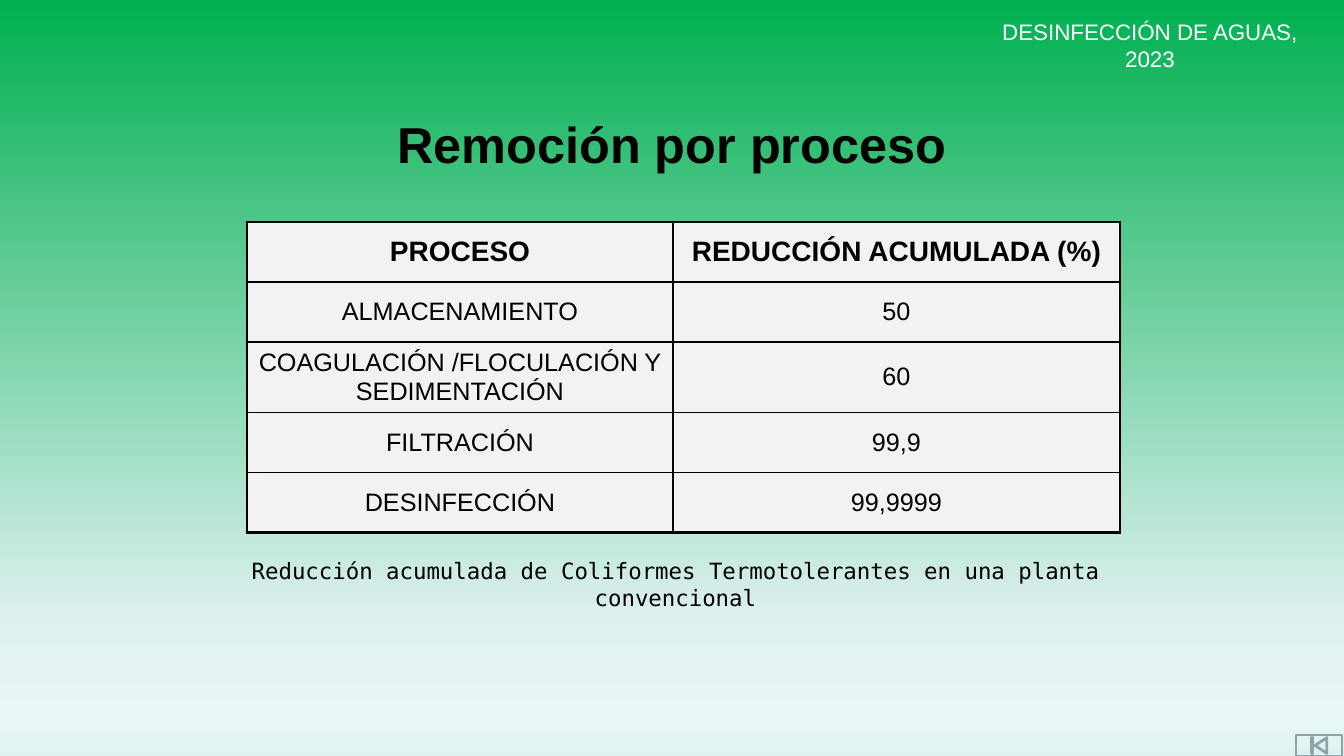
import lxml.etree
import pptx
import pptx.dml.color
import pptx.enum.shapes
import pptx.enum.text
import pptx.oxml
import pptx.oxml.ns
import pptx.util

SLIDE_WIDTH, SLIDE_HEIGHT = 1344, 756
EMU_PER_PX = 12192000 / SLIDE_WIDTH
COLORS = {
    "green": "00B050",
    "mist": "E0F1F2",
    "pale": "EBF6F7",
    "cell": "F2F2F2",
    "button": "8AA6A8",
    "black": "000000",
    "white": "FFFFFF",
}
BACKGROUND_STOPS = [(0, "green"), (83, "mist"), (95, "pale"), (100, "mist")]
COLUMN_WIDTHS = [426, 447]
ROW_HEIGHTS = [60, 60, 70, 60, 60]
REMOVAL_ROWS = [
    ("PROCESO", "REDUCCIÓN ACUMULADA (%)"),
    ("ALMACENAMIENTO", "50"),
    ("COAGULACIÓN /FLOCULACIÓN Y SEDIMENTACIÓN", "60"),
    ("FILTRACIÓN", "99,9"),
    ("DESINFECCIÓN", "99,9999"),
]


def px(length):
    return pptx.util.Emu(round(length * EMU_PER_PX))


def color(name):
    return pptx.dml.color.RGBColor.from_string(COLORS[name])


def write_centred(text_frame, text, size, color_name="black", bold=False, font="Arial"):
    text_frame.word_wrap = True
    paragraph = text_frame.paragraphs[0]
    paragraph.alignment = pptx.enum.text.PP_ALIGN.CENTER
    run = paragraph.add_run()
    run.text = text
    run.font.name = font
    run.font.size = pptx.util.Pt(size)
    run.font.bold = bold
    run.font.color.rgb = color(color_name)


def paint_background(slide):
    fill = slide.background.fill
    fill.gradient()
    fill.gradient_angle = 270
    stop_list = slide.background._cSld.find(".//" + pptx.oxml.ns.qn("a:gsLst"))
    for stop in list(stop_list):
        stop_list.remove(stop)
    for percent, name in BACKGROUND_STOPS:
        stop = lxml.etree.SubElement(
            stop_list, pptx.oxml.ns.qn("a:gs"), pos=str(percent * 1000))
        lxml.etree.SubElement(
            stop, pptx.oxml.ns.qn("a:srgbClr"), val=COLORS[name])


def add_title(slide, text):
    title = slide.shapes.title
    title.left, title.top, title.width, title.height = map(px, (0, 107, SLIDE_WIDTH, 72))
    title.text_frame.vertical_anchor = pptx.enum.text.MSO_ANCHOR.MIDDLE
    write_centred(title.text_frame, text, 36, bold=True)


def add_text(slide, box, text, **style):
    text_box = slide.shapes.add_textbox(*map(px, box))
    write_centred(text_box.text_frame, text, 16, **style)


def add_start_button(slide):
    button = slide.shapes.add_shape(
        pptx.enum.shapes.MSO_SHAPE.ACTION_BUTTON_BEGINNING,
        *map(px, (1296, 735, 46, 21)))
    button.shadow.inherit = False
    button.fill.background()
    button.line.color.rgb = color("button")
    button.line.width = pptx.util.Pt(2)


def set_borders(cell, widths):
    """Draw black borders; widths maps L, R, T and B to points."""
    properties = cell._tc.get_or_add_tcPr()
    for position, side in enumerate("LRTB"):
        border = pptx.oxml.parse_xml(
            f'<a:ln{side} {pptx.oxml.ns.nsdecls("a")} w="{pptx.util.Pt(widths[side])}">'
            f'<a:solidFill><a:srgbClr val="{COLORS["black"]}"/></a:solidFill>'
            f'</a:ln{side}>')
        properties.insert(position, border)


def add_removal_table(slide):
    last_row, last_column = len(ROW_HEIGHTS) - 1, len(COLUMN_WIDTHS) - 1
    frame = slide.shapes.add_table(
        len(ROW_HEIGHTS), len(COLUMN_WIDTHS), px(247), px(222),
        px(sum(COLUMN_WIDTHS)), px(sum(ROW_HEIGHTS)))
    table = frame.table
    table.horz_banding = False
    for column, width in zip(table.columns, COLUMN_WIDTHS):
        column.width = px(width)
    for row, height in zip(table.rows, ROW_HEIGHTS):
        row.height = px(height)
    for row_index, texts in enumerate(REMOVAL_ROWS):
        is_header = row_index == 0
        for column_index, text in enumerate(texts):
            cell = table.cell(row_index, column_index)
            cell.fill.solid()
            cell.fill.fore_color.rgb = color("cell")
            cell.vertical_anchor = pptx.enum.text.MSO_ANCHOR.MIDDLE
            write_centred(cell.text_frame, text, 20 if is_header else 18, bold=is_header)
            outer = {
                "L": column_index == 0,
                "R": column_index == last_column,
                "T": is_header,
                "B": row_index == last_row,
            }
            set_borders(cell, {side: 2.25 if edge else 1 for side, edge in outer.items()})


def main():
    presentation = pptx.Presentation()
    presentation.slide_width = px(SLIDE_WIDTH)
    presentation.slide_height = px(SLIDE_HEIGHT)
    slide = presentation.slides.add_slide(presentation.slide_layouts[5])
    paint_background(slide)
    add_start_button(slide)
    add_text(slide, (990, 13, 320, 37), "DESINFECCIÓN DE AGUAS, 2023", color_name="white")
    add_removal_table(slide)
    add_text(slide, (239, 552, 873, 37),
             "Reducción acumulada de Coliformes Termotolerantes en una planta convencional",
             font="DejaVu Sans Mono")
    add_title(slide, "Remoción por proceso")
    presentation.save("out.pptx")


if __name__ == "__main__":
    main()
